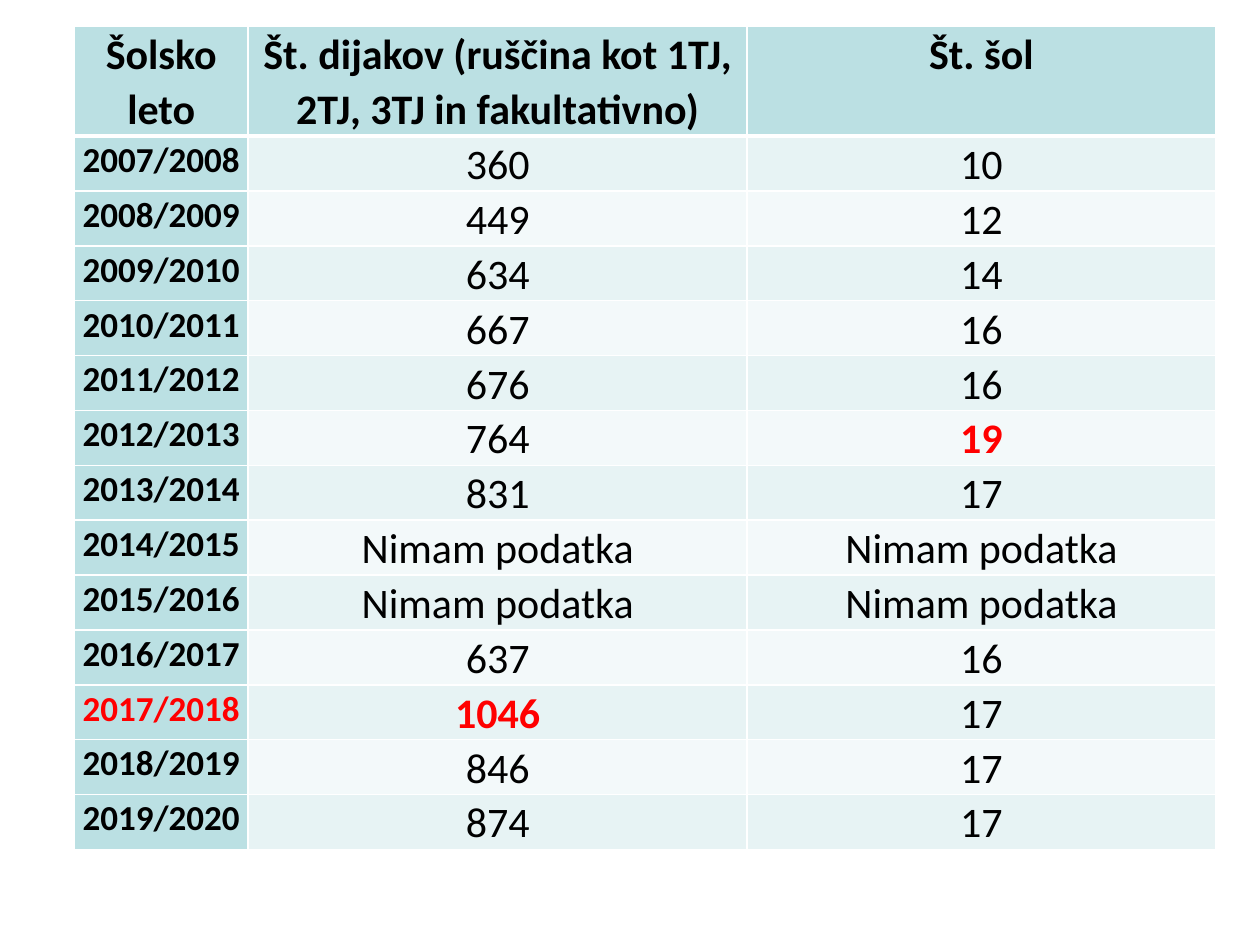
from lxml import etree
from pptx import Presentation
from pptx.dml.color import RGBColor
from pptx.enum.text import PP_ALIGN
from pptx.oxml.ns import qn
from pptx.util import Inches, Pt

CENTER = PP_ALIGN.CENTER
BLACK = RGBColor(0x00, 0x00, 0x00)
RED = RGBColor(0xFF, 0x00, 0x00)
WHITE = RGBColor(0xFF, 0xFF, 0xFF)
TEAL = RGBColor(0xBB, 0xE0, 0xE3)
BANDS = (RGBColor(0xF3, 0xF9, 0xFA), RGBColor(0xE7, 0xF3, 0xF4))

BLANK_LAYOUT = 6
COLUMN_WIDTHS = (1.38, 3.96, 3.72)
HEADER_HEIGHT = 0.7
ROW_HEIGHT = 0.38
SHORT_ROW_HEIGHT = 0.35
SHORT_ROWS = (4, 5)
TABLE_HEIGHT = 6.15

NO_DATA = "Nimam podatka"
HEADER = ("Šolsko leto", "Št. dijakov (ruščina kot 1TJ, 2TJ, 3TJ in fakultativno)", "Št. šol")
FIRST_YEAR = 2007
COUNTS = (
    ("360", "10"),
    ("449", "12"),
    ("634", "14"),
    ("667", "16"),
    ("676", "16"),
    ("764", "19"),
    ("831", "17"),
    (NO_DATA, NO_DATA),
    (NO_DATA, NO_DATA),
    ("637", "16"),
    ("1046", "17"),
    ("846", "17"),
    ("874", "17"),
)
HIGHLIGHTS = ("19", "1046", "2017/2018")


def table_rows():
    years = range(FIRST_YEAR, FIRST_YEAR + len(COUNTS))
    return [HEADER] + [(f"{year}/{year + 1}", *counts) for year, counts in zip(years, COUNTS)]


def add_border(cell, side, points):
    line = etree.SubElement(cell._tc.get_or_add_tcPr(), qn(f"a:{side}"), w=str(Pt(points)))
    fill = etree.SubElement(line, qn("a:solidFill"))
    etree.SubElement(fill, qn("a:srgbClr"), val=str(WHITE))


def style_cell(cell, row, column):
    thick_side = {0: "lnB", 1: "lnT"}.get(row)
    for side in ("lnL", "lnR", "lnT", "lnB"):
        add_border(cell, side, 3 if side == thick_side else 1)
    cell.fill.solid()
    cell.fill.fore_color.rgb = TEAL if row == 0 or column == 0 else BANDS[row % 2]
    cell.margin_left = cell.margin_right = Inches(0.06)
    cell.margin_top = cell.margin_bottom = 0


def write_cell(cell, text, row, column):
    cell.text = text
    para = cell.text_frame.paragraphs[0]
    para.alignment = CENTER
    para.line_spacing = 1.07
    highlighted = text in HIGHLIGHTS
    font = para.font
    font.name = "Calibri"
    font.size = Pt(20 if row and column == 0 else 24)
    font.bold = row == 0 or column == 0 or highlighted
    font.color.rgb = RED if highlighted else BLACK


def add_school_table(page, rows):
    frame = page.shapes.add_table(
        len(rows), len(HEADER), Inches(0.59), Inches(0.21),
        Inches(sum(COLUMN_WIDTHS)), Inches(TABLE_HEIGHT))
    table = frame.table
    for column, width in zip(table.columns, COLUMN_WIDTHS):
        column.width = Inches(width)
    for row, texts in enumerate(rows):
        height = SHORT_ROW_HEIGHT if row in SHORT_ROWS else ROW_HEIGHT
        table.rows[row].height = Inches(height if row else HEADER_HEIGHT)
        for column, text in enumerate(texts):
            cell = table.cell(row, column)
            style_cell(cell, row, column)
            write_cell(cell, text, row, column)
    frame.height = Inches(TABLE_HEIGHT)


def main():
    deck = Presentation()
    deck.slide_width, deck.slide_height = Inches(10), Inches(7.5)
    page = deck.slides.add_slide(deck.slide_layouts[BLANK_LAYOUT])
    add_school_table(page, table_rows())
    deck.save("out.pptx")


if __name__ == "__main__":
    main()
